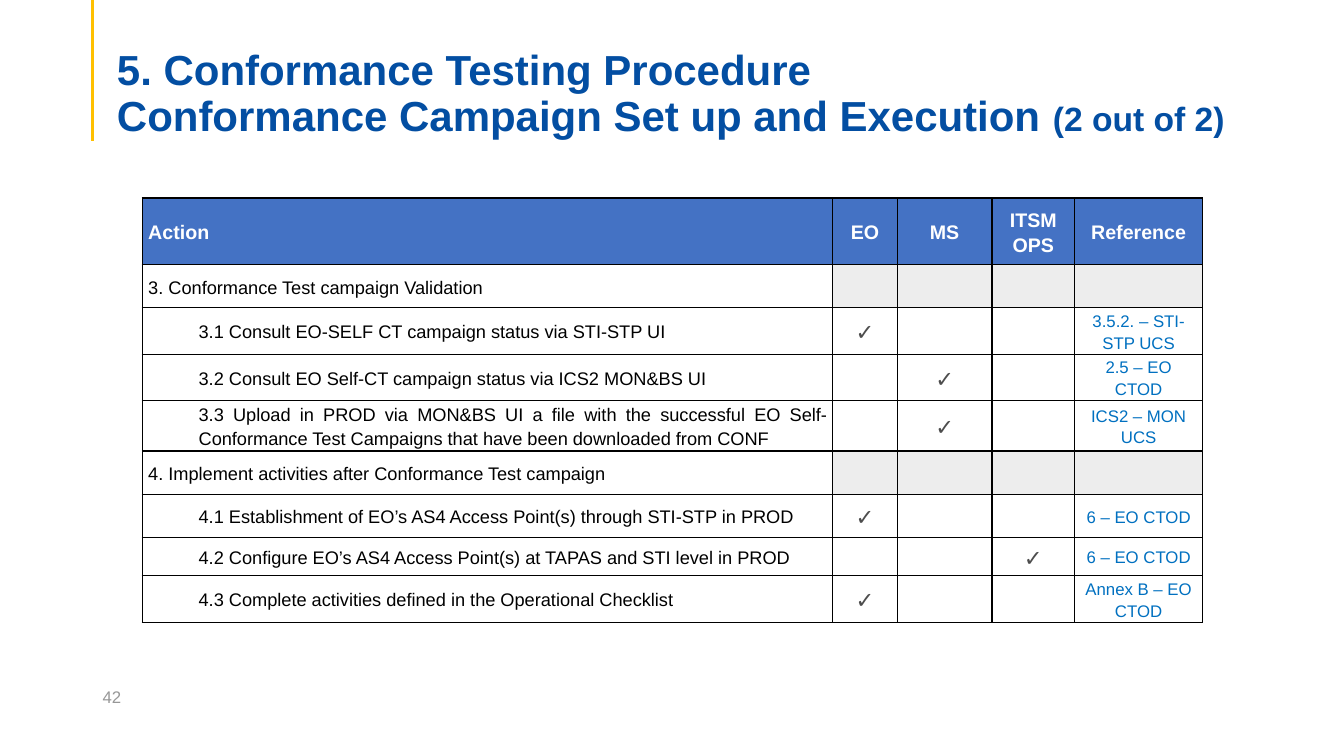
from dataclasses import dataclass

from lxml.etree import SubElement
from pptx import Presentation
from pptx.dml.color import RGBColor as Rgb
from pptx.enum.shapes import MSO_CONNECTOR as Conn
from pptx.enum.text import MSO_ANCHOR as Anchor, MSO_AUTO_SIZE as Fit, PP_ALIGN as Align
from pptx.oxml import parse_xml
from pptx.oxml.ns import nsdecls, qn
from pptx.util import Inches, Pt


@dataclass(frozen=True)
class Theme:
    font: str = "Arial"
    title: str = "034EA2"
    rule: str = "FFC000"
    head: str = "4472C4"
    band: str = "EDEDED"
    paper: str = "FFFFFF"
    ink: str = "000000"
    mark: str = "4D4D4D"
    link: str = "0070C0"
    page: str = "979797"
    title_size: int = 30
    part_size: int = 24
    head_size: int = 14
    body_size: int = 13
    mark_size: int = 16
    small_size: int = 12


T = Theme()
WIDE, HIGH = Inches(13.33), Inches(7.5)
COLS = [51.38, 4.8, 7.05, 6.15, 9.53]
ROWS = [8.8, 5.73, 4.67, 5.33, 5.73, 5.73, 5.73, 5.07, 6]
HEADS = ["Action", "EO", "MS", "ITSM OPS", "Reference"]
# Action, marked column, reference; a heading row has only its action.
STEPS = [
    ("3. Conformance Test campaign Validation",),
    ("3.1 Consult EO-SELF CT campaign status via STI-STP UI", "EO", "3.5.2. – STI-STP UCS"),
    ("3.2 Consult EO Self-CT campaign status via ICS2 MON&BS UI", "MS", "2.5 – EO CTOD"),
    ("3.3 Upload in PROD via MON&BS UI a file with the successful EO Self-Conformance "
     "Test Campaigns that have been downloaded from CONF", "MS", "ICS2 – MON UCS"),
    ("4. Implement activities after Conformance Test campaign",),
    ("4.1 Establishment of EO’s AS4 Access Point(s) through STI-STP in PROD", "EO", "6 – EO CTOD"),
    ("4.2 Configure EO’s AS4 Access Point(s) at TAPAS and STI level in PROD",
     "ITSM OPS", "6 – EO CTOD"),
    ("4.3 Complete activities defined in the Operational Checklist", "EO", "Annex B – EO CTOD"),
]


def across(share):
    """Length for a percentage of the slide's width."""
    return round(WIDE * share / 100)


def down(share):
    """Length for a percentage of the slide's height."""
    return round(HIGH * share / 100)


def style(run, size, color, bold=False):
    font = run.font
    font.name, font.size, font.bold = T.font, Pt(size), bold
    font.color.rgb = Rgb.from_string(color)


def add_rule(slide):
    x = across(6.9)
    line = slide.shapes.add_connector(Conn.STRAIGHT, x, 0, x, down(18.67))
    line.line.color.rgb = Rgb.from_string(T.rule)
    line.line.width = Pt(2.25)
    SubElement(line._element.spPr, qn("a:effectLst"))


def add_title(slide, lines, part):
    box = slide.shapes.title
    box.left, box.top = across(7.95), down(7.07)
    box.width, box.height = across(86.25), down(11.47)
    frame = box.text_frame
    frame.auto_size, frame.word_wrap = Fit.NONE, True
    frame.vertical_anchor = Anchor.BOTTOM
    frame.margin_left = frame.margin_right = Inches(0.1)
    frame.margin_top, frame.margin_bottom = Inches(0.05), 0
    frame.text = "\n".join(lines)
    for para in frame.paragraphs:
        para.alignment, para.line_spacing = Align.LEFT, 0.9
        para.space_before = Pt(0)
        style(para.runs[0], T.title_size, T.title, True)
    run = frame.paragraphs[-1].add_run()
    run.text = part
    style(run, T.part_size, T.title, True)


def add_page(slide, text):
    box = slide.shapes.add_textbox(across(6.9), down(89.47), across(22.5), down(5.33))
    frame = box.text_frame
    frame.word_wrap, frame.vertical_anchor = True, Anchor.MIDDLE
    frame.text = text
    style(frame.paragraphs[0].runs[0], T.small_size, T.page)


def dress(cell, fill):
    """Give a cell its borders, fill and margins."""
    props = cell._tc.get_or_add_tcPr()
    for side in ("lnL", "lnR", "lnT", "lnB"):
        props.append(parse_xml(
            f'<a:{side} {nsdecls("a")} w="{Pt(1)}"><a:solidFill>'
            f'<a:srgbClr val="{T.ink}"/></a:solidFill></a:{side}>'))
    cell.fill.solid()
    cell.fill.fore_color.rgb = Rgb.from_string(fill)
    cell.margin_left = cell.margin_right = Inches(0.06)
    cell.margin_top = cell.margin_bottom = 0
    cell.vertical_anchor = Anchor.MIDDLE


def write(cell, text, size, color, align=Align.CENTER, bold=False, gap=1, inset=0):
    para = cell.text_frame.paragraphs[0]
    para.text = text
    para.alignment, para.line_spacing = align, 1.15
    para.space_after = Pt(gap)
    if inset:
        para.level = 1
        props = para._p.get_or_add_pPr()
        props.set("marL", str(Inches(inset)))
        props.set("indent", "0")
    style(para.runs[0], size, color, bold)


def fill_step(cells, action, mark=None, source=None):
    write(cells[0], action, T.body_size, T.ink, Align.JUSTIFY, inset=0.5 if mark else 0)
    if mark:
        write(cells[HEADS.index(mark)], "✓", T.mark_size, T.mark, bold=True)
        write(cells[-1], source, T.small_size, T.link)


def add_steps(slide):
    table = slide.shapes.add_table(
        len(ROWS), len(COLS), across(10.58), down(26.2),
        across(sum(COLS)), down(sum(ROWS))).table
    for col, share in zip(table.columns, COLS):
        col.width = across(share)
    for row, share in zip(table.rows, ROWS):
        row.height = down(share)

    for i, head in enumerate(HEADS):
        cell = table.cell(0, i)
        dress(cell, T.head)
        write(cell, head, T.head_size, T.paper, Align.CENTER if i else Align.LEFT, True, 0)

    for r, step in enumerate(STEPS, 1):
        cells = list(table.rows[r].cells)
        for i, cell in enumerate(cells):
            dress(cell, T.band if i and len(step) == 1 else T.paper)
        fill_step(cells, *step)


def main():
    deck = Presentation()
    deck.slide_width, deck.slide_height = WIDE, HIGH
    slide = deck.slides.add_slide(deck.slide_layouts[5])
    add_rule(slide)
    add_page(slide, "42")
    add_title(slide, ["5. Conformance Testing Procedure",
                      "Conformance Campaign Set up and Execution "], "(2 out of 2)")
    add_steps(slide)
    deck.save("out.pptx")


if __name__ == "__main__":
    main()
